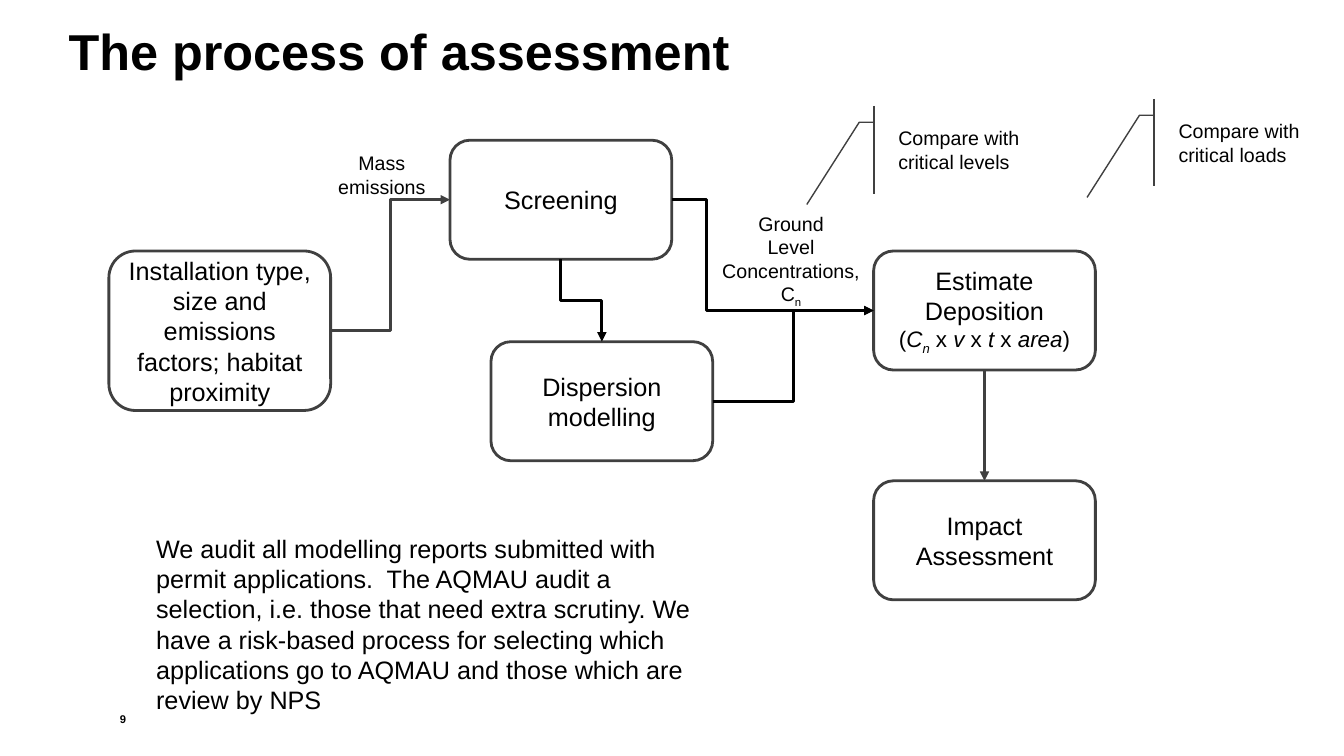
from lxml.etree import SubElement
from pptx import Presentation
from pptx.dml.color import RGBColor
from pptx.enum.shapes import MSO_CONNECTOR as CONN, MSO_SHAPE as SHAPE
from pptx.enum.text import MSO_ANCHOR as ANCHOR, MSO_AUTO_SIZE as FIT, PP_ALIGN as ALIGN
from pptx.oxml.ns import qn
from pptx.util import Inches, Pt

W, H = Inches(13.33), Inches(7.5)
BOX_W, BOX_H = 16.5, 15.75  # standard process box, % of the slide
TOP, LEFT, BOTTOM, RIGHT = range(4)  # connection sites
BLACK, GREY = "000000", "404040"


def color(hex_string):
    return RGBColor.from_string(hex_string)


def place(x, y, w, h):
    """Turn percentages of the slide into lengths."""
    return [int(side * share / 100) for side, share in zip((W, H, W, H), (x, y, w, h))]


def write(sp, lines, size=18, bold=False, align=ALIGN.LEFT, anchor=ANCHOR.TOP,
          spacing=None, margin=None, wrap=True, fit=FIT.NONE):
    """Write lines; a line is a string or a list of (text, style) runs."""
    tf = sp.text_frame
    tf.word_wrap, tf.auto_size, tf.vertical_anchor = wrap, fit, anchor
    if margin is not None:
        tf.margin_left = tf.margin_right = tf.margin_top = tf.margin_bottom = margin
    for i, line in enumerate(lines):
        p = tf.add_paragraph() if i else tf.paragraphs[0]
        p.alignment = align
        if spacing:
            p.line_spacing = spacing
        for text, style in [(line, {})] if isinstance(line, str) else line:
            r = p.add_run()
            r.text = text
            r.font.name, r.font.bold = "Arial", bold
            r.font.size = Pt(style.get("size", size))
            r.font.italic = style.get("italic", False)
            r.font.color.rgb = color(BLACK)
            if style.get("sub"):
                r.font._element.set("baseline", "-25000")


def label(s, x, y, w, h, lines, **fmt):
    sp = s.shapes.add_textbox(*place(x, y, w, h))
    write(sp, lines, **fmt)


def outlined(s, kind, x, y, w, h, weight, lines, **fmt):
    sp = s.shapes.add_shape(kind, *place(x, y, w, h))
    sp.shadow.inherit = False
    sp.fill.background()
    sp.line.color.rgb = color(GREY)
    sp.line.width = Pt(weight)
    write(sp, lines, anchor=ANCHOR.MIDDLE, **fmt)
    return sp


def box(s, x, y, lines, h=BOX_H):
    return outlined(s, SHAPE.ROUNDED_RECTANGLE, x, y, BOX_W, h, 2, lines,
                    align=ALIGN.CENTER)


def callout(s, x, y, text):
    outlined(s, SHAPE.LINE_CALLOUT_2_ACCENT_BAR, x, y, 13, 11.6, 1, [text], size=14)


def turn_downwards(cxn):
    """Make an elbow leave and arrive vertically: swap its sides and rotate it."""
    x, y, w, h = cxn.left, cxn.top, cxn.width, cxn.height
    cxn.left, cxn.top = x + (w - h) // 2, y + (h - w) // 2
    cxn.width, cxn.height = h, w
    xfrm = cxn._element.spPr.find(qn("a:xfrm"))
    xfrm.set("rot", "16200000")
    xfrm.set("flipH", "1")


def arrow(s, start, start_site, end, end_site, hex_color, kind=CONN.ELBOW, bend=None):
    cxn = s.shapes.add_connector(kind, 0, 0, 0, 0)
    cxn.begin_connect(start, start_site)
    cxn.end_connect(end, end_site)
    if kind == CONN.ELBOW and start_site == BOTTOM:
        turn_downwards(cxn)
    cxn.line.color.rgb = color(hex_color)
    cxn.line.width = Pt(2.25)
    SubElement(cxn.line._get_or_add_ln(), qn("a:tailEnd"), type="triangle")
    spPr = cxn._element.spPr
    SubElement(spPr, qn("a:effectLst"))
    if bend is not None:
        geom = spPr.find(qn("a:prstGeom"))
        guides = geom.find(qn("a:avLst"))
        if guides is None:
            guides = SubElement(geom, qn("a:avLst"))
        SubElement(guides, qn("a:gd"), name="adj1", fmla=f"val {int(bend * 100000)}")


def main():
    prs = Presentation()
    prs.slide_width, prs.slide_height = W, H
    s = prs.slides.add_slide(prs.slide_layouts[5])

    # Title and page number
    title = s.shapes.title
    title.left, title.top, title.width, title.height = place(5.1, 3.6, 89.8, 8.5)
    write(title, ["The process of assessment"], size=36, bold=True, spacing=0.9, margin=0)
    label(s, 5.1, 90.4, 4.28, 5.6, ["9"], size=8, bold=True, align=ALIGN.RIGHT,
          anchor=ANCHOR.BOTTOM, spacing=0.95, margin=0)

    # Process steps
    italic, plain = {"size": 16, "italic": True}, {"size": 16}
    formula = [("(", plain), ("C", italic), ("n", {**italic, "sub": True}),
               (" x ", plain), ("v", italic), (" x ", plain), ("t", italic),
               (" x ", plain), ("area", italic), (")", plain)]
    source = box(s, 8.1, 33.2, ["Installation type, size and emissions factors; "
                                "habitat proximity"], h=21.1)
    screening = box(s, 33.48, 18.55, ["Screening"])
    dispersion = box(s, 36.53, 45.2, ["Dispersion modelling"])
    deposition = box(s, 65, 33.2, ["Estimate", "Deposition", formula])
    impact = box(s, 65, 63.6, ["Impact", "Assessment"])

    # Flow between the steps
    arrow(s, source, RIGHT, screening, LEFT, GREY)
    arrow(s, screening, RIGHT, deposition, LEFT, BLACK, bend=0.171)
    arrow(s, screening, BOTTOM, dispersion, TOP, BLACK)
    arrow(s, dispersion, RIGHT, deposition, LEFT, BLACK)
    arrow(s, deposition, BOTTOM, impact, TOP, GREY, kind=CONN.STRAIGHT)

    # Flow labels
    flow = dict(size=14, align=ALIGN.CENTER, wrap=False, fit=FIT.SHAPE_TO_FIT_TEXT)
    label(s, 24.4, 19.33, 8.03, 7.6, ["Mass", "emissions"], **flow)
    label(s, 52.74, 27.33, 12.23, 13.87,
          ["Ground", "Level", "Concentrations,", [("C", {}), ("n", {"sub": True})]], **flow)

    # Callouts and audit note
    callout(s, 66.1, 14, "Compare with critical levels")
    callout(s, 86.95, 13.07, "Compare with critical loads")
    label(s, 10.88, 69.87, 43.14, 25.6,
          ["We audit all modelling reports submitted with permit applications.  The AQMAU "
           "audit a selection, i.e. those that need extra scrutiny. We have a risk-based "
           "process for selecting which applications go to AQMAU and those which are "
           "review by NPS"], fit=FIT.SHAPE_TO_FIT_TEXT)

    prs.save("out.pptx")


if __name__ == "__main__":
    main()
